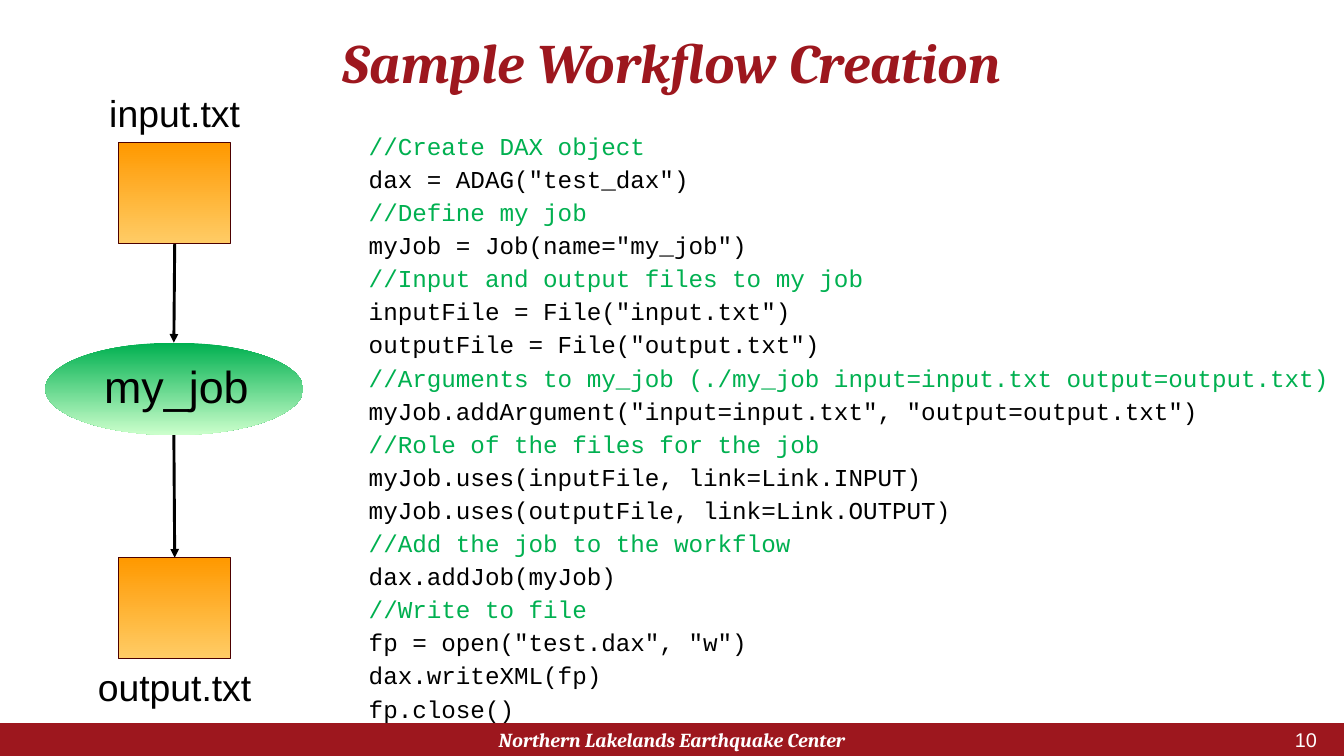
from pptx import Presentation
from pptx.dml.color import RGBColor
from pptx.enum import shapes, text
from pptx.oxml import ns, xmlchemy
from pptx.util import Inches, Pt

RED = RGBColor(0x9D, 0x17, 0x1E)
MAROON = RGBColor(0x4C, 0x00, 0x00)
GREEN = RGBColor(0x00, 0xB0, 0x50)
MINT = RGBColor(0xCC, 0xFF, 0xCC)
ORANGE = RGBColor(0xFF, 0x99, 0x00)
AMBER = RGBColor(0xFF, 0xCC, 0x66)
WHITE = RGBColor(0xFF, 0xFF, 0xFF)
BLACK = RGBColor(0x00, 0x00, 0x00)

KIND = shapes.MSO_SHAPE
ALIGN = text.PP_ALIGN
ANCHOR = text.MSO_ANCHOR
WIDE = (0.12, 0.06)
THIN = (0.1, 0.05)

HEAD = {"name": "Cambria", "size": Pt(47.7), "bold": True, "italic": True}
FOOT = {**HEAD, "size": Pt(17)}
PAGE = {"name": "Arial", "size": Pt(17)}
LABEL = {"name": "Arial", "size": Pt(32)}
JOB = {"name": "Arial", "size": Pt(38.4)}
MONO = {"name": "Courier New", "size": Pt(20.8)}

CODE = """//Create DAX object
dax = ADAG("test_dax")
//Define my job
myJob = Job(name="my_job")
//Input and output files to my job
inputFile = File("input.txt")
outputFile = File("output.txt")
//Arguments to my_job (./my_job input=input.txt output=output.txt)
myJob.addArgument("input=input.txt", "output=output.txt")
//Role of the files for the job
myJob.uses(inputFile, link=Link.INPUT)
myJob.uses(outputFile, link=Link.OUTPUT)
//Add the job to the workflow
dax.addJob(myJob)
//Write to file
fp = open("test.dax", "w")
dax.writeXML(fp)
fp.close()"""


def style(run, font, color):
    for key, value in font.items():
        setattr(run.font, key, value)
    run.font.color.rgb = color


def set_frame(frame, inset, anchor):
    side, edge = (Inches(size) for size in inset)
    values = {
        "word_wrap": True,
        "auto_size": text.MSO_AUTO_SIZE.NONE,
        "vertical_anchor": anchor,
        "margin_left": side,
        "margin_right": side,
        "margin_top": edge,
        "margin_bottom": edge,
    }
    for key, value in values.items():
        setattr(frame, key, value)


def write(frame, words, font, color, align=ALIGN.CENTER):
    para = frame.paragraphs[0]
    para.alignment = align
    run = para.add_run()
    run.text = words
    style(run, font, color)


def add_text(slide, box, words, font, color=BLACK, align=ALIGN.CENTER,
             inset=THIN, anchor=ANCHOR.TOP):
    frame = slide.shapes.add_textbox(*map(Inches, box)).text_frame
    set_frame(frame, inset, anchor)
    write(frame, words, font, color, align)


def add_title(slide, words):
    title = slide.shapes.title
    title.left, title.top = Inches(0.4), Inches(0.36)
    title.width, title.height = Inches(15.2), Inches(0.84)
    set_frame(title.text_frame, WIDE, ANCHOR.MIDDLE)
    write(title.text_frame, words, HEAD, RED)
    title.text_frame.paragraphs[0].line_spacing = 0.9


def add_shape(slide, kind, box, colors, line=None):
    """Fill with one colour, or with two that blend from top to bottom."""
    shape = slide.shapes.add_shape(kind, *map(Inches, box))
    shape.shadow.inherit = False
    if len(colors) == 1:
        shape.fill.solid()
        shape.fill.fore_color.rgb = colors[0]
    else:
        shape.fill.gradient()
        shape.fill.gradient_angle = 270
        for stop, color in zip(shape.fill.gradient_stops, colors):
            stop.color.rgb = color
    if line is None:
        shape.line.fill.background()
    else:
        shape.line.color.rgb = line
        shape.line.width = Pt(0.75)


def add_arrow(slide, start, end):
    arrow = slide.shapes.add_connector(
        shapes.MSO_CONNECTOR.STRAIGHT, *map(Inches, start + end))
    arrow.line.color.rgb = BLACK
    arrow.line.width = Pt(2.5)
    tip = xmlchemy.OxmlElement("a:tailEnd")
    tip.set("type", "triangle")
    props = arrow._element.spPr
    props.find(ns.qn("a:ln")).append(tip)
    props.append(xmlchemy.OxmlElement("a:effectLst"))


def add_code(slide, box, code):
    frame = slide.shapes.add_textbox(*map(Inches, box)).text_frame
    set_frame(frame, WIDE, ANCHOR.TOP)
    for index, line in enumerate(code.splitlines()):
        para = frame.add_paragraph() if index else frame.paragraphs[0]
        para.space_before = Pt(3.4)
        run = para.add_run()
        run.text = line
        style(run, MONO, GREEN if line.startswith("//") else BLACK)


def add_flow(slide):
    """Draw the input file, the job and the output file, top to bottom."""
    add_shape(slide, KIND.OVAL, (0.54, 4.08, 3.07, 1.1), (GREEN, MINT))
    add_text(slide, (0.5, 4.22, 3.2, 0.75), "my_job", JOB)
    add_text(slide, (0.88, 1.03, 2.4, 0.64), "input.txt", LABEL)
    add_text(slide, (0.48, 7.86, 3.2, 0.64), "output.txt", LABEL)
    add_arrow(slide, (2.08, 2.9), (2.07, 4.08))
    add_arrow(slide, (2.07, 5.18), (2.08, 6.64))
    for top in (1.7, 6.64):
        add_shape(slide, KIND.RECTANGLE, (1.41, top, 1.33, 1.2),
                  (ORANGE, AMBER), MAROON)


def add_footer(slide):
    add_shape(slide, KIND.RECTANGLE, (0, 8.61, 16, 0.39), (RED,))
    add_text(slide, (5.3, 8.57, 5.4, 0.48),
             "Northern Lakelands Earthquake Center", FOOT, WHITE,
             inset=WIDE, anchor=ANCHOR.MIDDLE)
    add_text(slide, (14.3, 8.69, 1.5, 0.24), "10", PAGE, WHITE,
             ALIGN.RIGHT, WIDE, ANCHOR.MIDDLE)


def main():
    deck = Presentation()
    deck.slide_width, deck.slide_height = Inches(16), Inches(9)
    slide = deck.slides.add_slide(deck.slide_layouts.get_by_name("Title Only"))
    add_title(slide, "Sample Workflow Creation")
    add_footer(slide)
    add_flow(slide)
    add_code(slide, (4.27, 1.5, 11.73, 6.92), CODE)
    deck.save("out.pptx")


if __name__ == "__main__":
    main()
